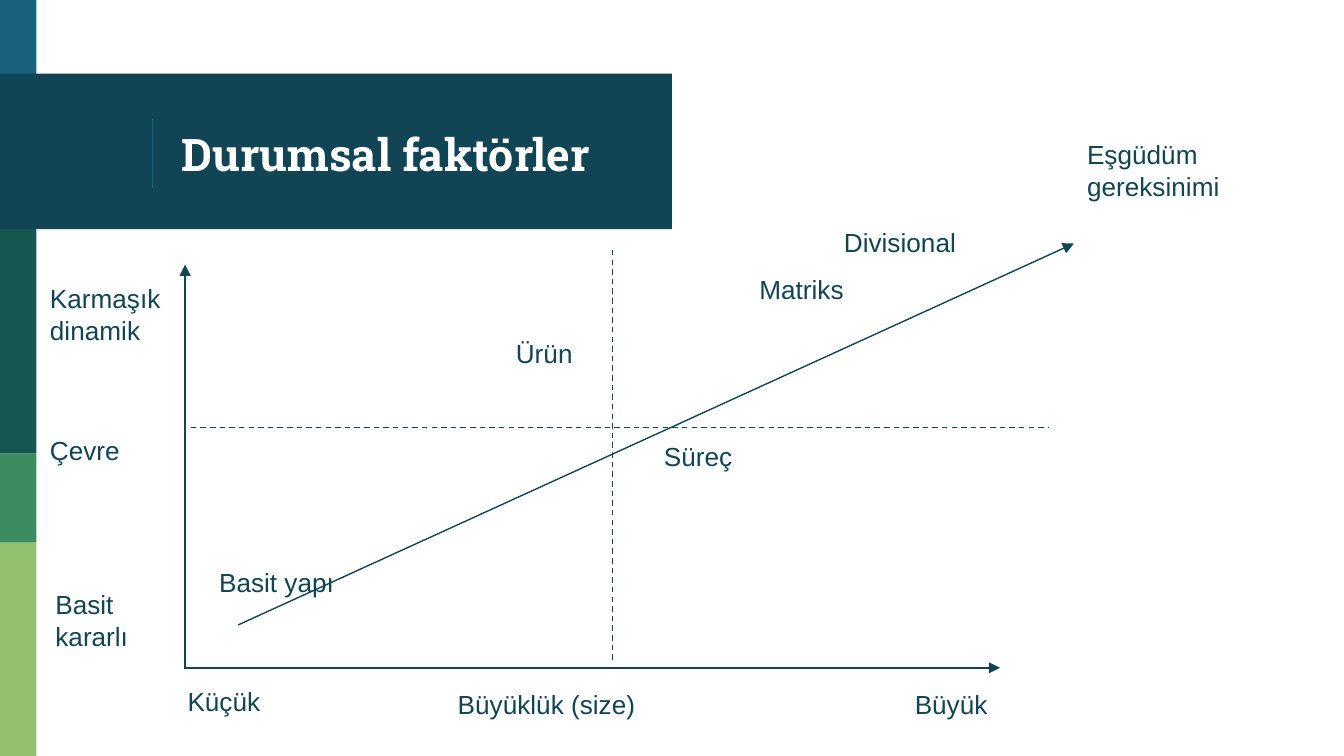
from lxml import etree
from pptx import Presentation
from pptx import util as u
from pptx.dml.color import RGBColor
from pptx.enum import dml, shapes, text
from pptx.oxml.ns import qn

INK, BLUE, WHITE = "114454", "18637B", "FFFFFF"


def rgb(value):
    return RGBColor.from_string(value)


def write(tf, words, size=14, font="Arial", color=INK, bold=False,
          anchor=text.MSO_ANCHOR.TOP, inset=(7.2, 3.6)):
    """Put one left-aligned paragraph into a text frame."""
    tf.word_wrap = True
    tf.auto_size = text.MSO_AUTO_SIZE.NONE
    tf.vertical_anchor = anchor
    tf.margin_left = tf.margin_right = u.Pt(inset[0])
    tf.margin_top = tf.margin_bottom = u.Pt(inset[1])
    p = tf.paragraphs[0]
    p.alignment = text.PP_ALIGN.LEFT
    r = p.add_run()
    r.text = words
    r.font.size, r.font.name, r.font.bold = u.Pt(size), font, bold
    r.font.color.rgb = rgb(color)


class Deck:
    """Holds the line style and the current slide."""

    line_width = 0.75

    def __init__(self, width, height):
        self.prs = Presentation()
        self.prs.slide_width, self.prs.slide_height = u.Pt(width), u.Pt(height)
        self.s = self.prs.slides.add_slide(self.prs.slide_layouts[5])

    def bar(self, x, y, w, h, color):
        sp = self.s.shapes.add_shape(shapes.MSO_SHAPE.RECTANGLE,
                                     *map(u.Pt, (x, y, w, h)))
        sp.shadow.inherit = False
        sp.fill.solid()
        sp.fill.fore_color.rgb = rgb(color)
        sp.line.fill.background()

    def title(self, x, y, w, h, words):
        sp = self.s.shapes.title
        sp.left, sp.top, sp.width, sp.height = map(u.Pt, (x, y, w, h))
        write(sp.text_frame, words, size=24, font="Roboto Slab", color=WHITE,
              bold=True, anchor=text.MSO_ANCHOR.MIDDLE, inset=(7.2, 7.2))
        # Bring the title in front of the band
        sp.element.getparent().append(sp.element)

    def label(self, x, y, w, h, words):
        sp = self.s.shapes.add_textbox(*map(u.Pt, (x, y, w, h)))
        write(sp.text_frame, words)

    def line(self, x1, y1, x2, y2, color=INK, dashed=False, arrow=False):
        ln = self.s.shapes.add_connector(shapes.MSO_CONNECTOR.STRAIGHT,
                                         *map(u.Pt, (x1, y1, x2, y2)))
        ln.line.width = u.Pt(self.line_width)
        ln.line.color.rgb = rgb(color)
        if dashed:
            ln.line.dash_style = dml.MSO_LINE.DASH
        sp_pr = ln.element.spPr
        if arrow:
            etree.SubElement(sp_pr.find(qn("a:ln")), qn("a:tailEnd"),
                             type="triangle")
        etree.SubElement(sp_pr, qn("a:effectLst"))


def main():
    deck = Deck(720, 405)

    # Side strip, each bar reaching down to the next
    strip = [(0, BLUE), (122.6, "165751"), (243, "3B8D61"), (290.8, "94BF6E")]
    ends = [41.5] + [top for top, _ in strip[2:]] + [405]
    for (top, color), end in zip(strip, ends):
        deck.bar(0, top, 19.5, end - top, color)

    # Title band
    deck.bar(0, 39.4, 360, 83.3, INK)
    deck.line(81.6, 64, 81.6, 100.8, color=BLUE)
    deck.title(90, 41.8, 252.7, 80.6, "Durumsal faktörler")

    # Axes
    deck.line(99.2, 358.4, 99.2, 141.8, arrow=True)
    deck.line(99.2, 357.8, 535.7, 357.8, arrow=True)

    # Quadrant dividers and the trend arrow
    deck.line(102.2, 229.1, 561.4, 229.1, dashed=True)
    deck.line(328, 133.9, 328, 354.7, dashed=True)
    deck.line(127.6, 334.8, 575.3, 130.5, arrow=True)

    # Labels: left, top, width, number of lines, words
    labels = [
        # Vertical axis
        (19.7, 147.8, 79.2, 2, "Karmaşık dinamik"),
        (19.7, 229.1, 79.2, 1, "Çevre"),
        (22.6, 311.8, 79.2, 2, "Basit kararlı"),
        # Horizontal axis
        (93.4, 363.6, 90.7, 1, "Küçük"),
        (238.1, 365.4, 193, 1, "Büyüklük (size)"),
        (483, 365.4, 90.7, 1, "Büyük"),
        # Structures
        (110.3, 299.9, 118.8, 1, "Basit yapı"),
        (269.3, 177, 96.5, 1, "Ürün"),
        (348.6, 232.4, 102.2, 1, "Süreç"),
        (399.7, 142.9, 90.7, 1, "Matriks"),
        (445, 117.7, 102.2, 1, "Divisional"),
        # Trend
        (575.3, 70.7, 124.6, 2, "Eşgüdüm gereksinimi"),
    ]
    for x, y, w, lines, words in labels:
        deck.label(x, y, w, 7.4 + 17 * lines, words)

    deck.prs.save("out.pptx")


if __name__ == "__main__":
    main()
